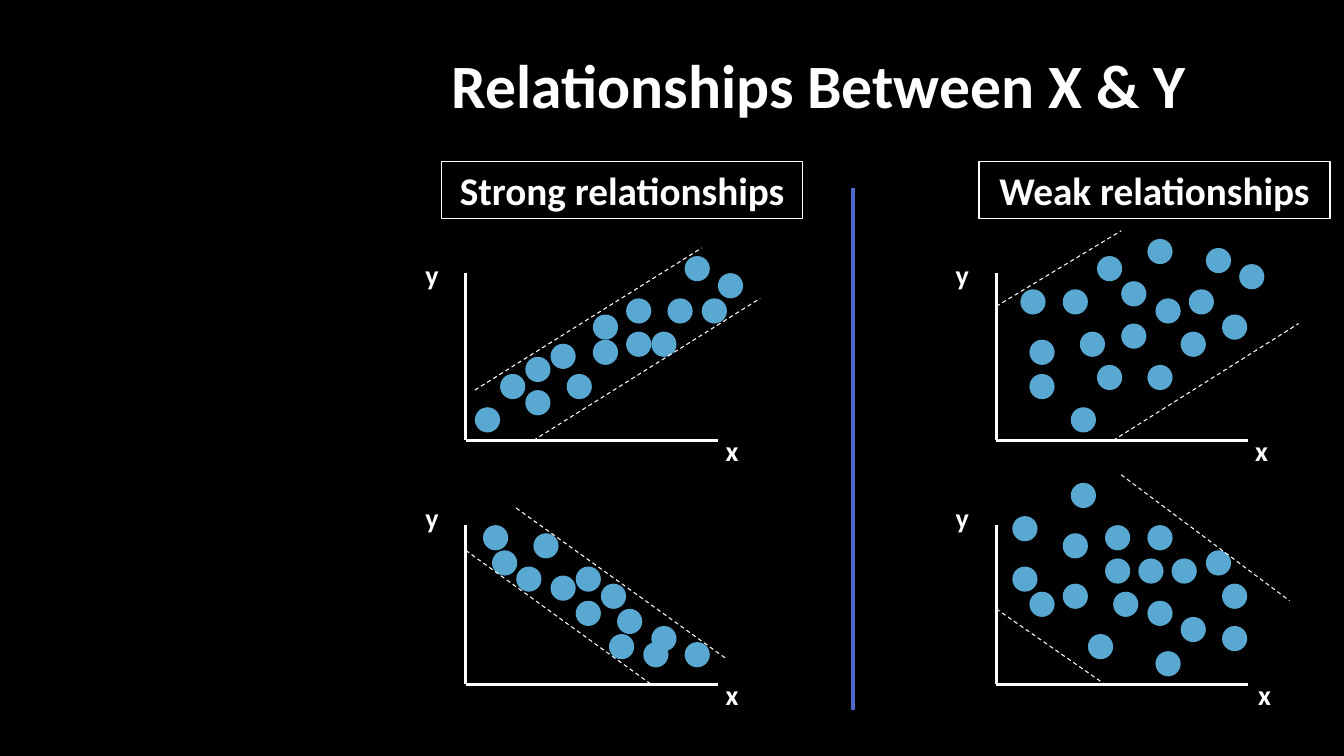
from dataclasses import dataclass

from lxml.etree import SubElement
from pptx import Presentation
from pptx.dml.color import RGBColor
from pptx.enum.dml import MSO_LINE
from pptx.enum.shapes import MSO_CONNECTOR, MSO_SHAPE
from pptx.enum.text import MSO_ANCHOR, MSO_AUTO_SIZE, PP_ALIGN
from pptx.oxml.ns import qn
from pptx.util import Inches, Pt


@dataclass(frozen=True)
class Theme:
    font: str = "Calibri"
    background: RGBColor = RGBColor.from_string("000000")
    ink: RGBColor = RGBColor.from_string("FFFFFF")
    point: RGBColor = RGBColor.from_string("59A8D1")
    divider: RGBColor = RGBColor.from_string("4E67C8")
    title_size: int = 44
    heading_size: int = 28
    label_size: int = 20


theme = Theme()
AXIS_WIDTH = 2.5
POINT_SIZE = 0.25
LABEL_HEIGHT = 0.44

# Axis heights run from top to base; points give their top left corners.
plots = [
    dict(left=4.62, top=2.71, base=4.37, y_label_top=2.51, x_label_left=7.1,
         points=[(4.71, 4.04), (4.96, 3.71), (6.79, 2.54), (6.96, 2.96),
                 (5.21, 3.87), (7.12, 2.71), (6.21, 3.29), (6.21, 2.96),
                 (6.62, 2.96), (5.88, 3.12), (5.21, 3.54), (5.46, 3.41),
                 (6.46, 3.29), (5.88, 3.37), (5.62, 3.71)],
         band=[(4.71, 3.87, 6.96, 2.46), (5.29, 4.37, 7.54, 2.96)]),
    dict(left=4.62, top=5.21, base=6.79, y_label_top=4.92, x_label_left=7.1,
         points=[(6.38, 6.37), (4.88, 5.46), (6.79, 6.37), (5.29, 5.29),
                 (6.12, 6.04), (6.46, 6.21), (5.71, 5.62), (4.79, 5.21),
                 (5.12, 5.62), (5.46, 5.71), (6.04, 6.29), (5.96, 5.79),
                 (5.71, 5.96)],
         band=[(5.12, 5.04, 7.21, 6.54), (4.62, 5.46, 6.46, 6.79)]),
    dict(left=9.88, top=2.71, base=4.37, y_label_top=2.51, x_label_left=12.35,
         points=[(11.12, 2.79), (10.21, 3.71), (11.38, 3.62), (11.79, 2.87),
                 (10.54, 2.87), (10.62, 4.04), (10.88, 3.62), (11.46, 2.96),
                 (10.88, 2.54), (10.21, 3.37), (10.12, 2.87), (10.71, 3.29),
                 (11.71, 3.29), (11.12, 3.21), (11.38, 2.37), (12.29, 2.62),
                 (12.12, 3.12), (11.96, 2.46)],
         band=[(9.88, 3.04, 11.12, 2.29), (11.04, 4.37, 12.88, 3.21)]),
    dict(left=9.88, top=5.21, base=6.79, y_label_top=4.92, x_label_left=12.38,
         points=[(10.04, 5.62), (10.04, 5.12), (10.54, 5.79), (11.46, 6.46),
                 (10.21, 5.87), (10.96, 5.21), (11.38, 5.96), (11.29, 5.54),
                 (10.96, 5.54), (10.54, 5.29), (11.62, 5.54), (11.04, 5.87),
                 (10.79, 6.29), (11.71, 6.12), (12.12, 5.79), (11.96, 5.46),
                 (12.12, 6.21), (11.38, 5.21), (10.62, 4.79)],
         band=[(11.12, 4.71, 12.79, 5.96), (9.88, 6.04, 10.96, 6.79)]),
]
headings = [("Strong relationships", 4.38, 3.58),
            ("Weak relationships", 9.71, 3.48)]


def write_text(frame, text, size, align=PP_ALIGN.LEFT, wrap=True,
               auto_size=MSO_AUTO_SIZE.SHAPE_TO_FIT_TEXT):
    frame.word_wrap = wrap
    frame.auto_size = auto_size
    paragraph = frame.paragraphs[0]
    paragraph.alignment = align
    run = paragraph.add_run()
    run.text = text
    run.font.name = theme.font
    run.font.size = Pt(size)
    run.font.bold = True
    run.font.color.rgb = theme.ink


def draw_line(ends, width, color=theme.ink, dash=None):
    """Draw a straight line; ends is (x1, y1, x2, y2) in inches."""
    line = slide.shapes.add_connector(
        MSO_CONNECTOR.STRAIGHT, *(Inches(end) for end in ends))
    line.line.color.rgb = color
    line.line.width = Pt(width)
    if dash:
        line.line.dash_style = dash
    SubElement(line._element.spPr, qn("a:effectLst"))


prs = Presentation()
prs.slide_width = Inches(13.33)
prs.slide_height = Inches(7.5)
slide = prs.slides.add_slide(prs.slide_layouts[5])
slide.background.fill.solid()
slide.background.fill.fore_color.rgb = theme.background

title = slide.shapes.title
title.left, title.top = Inches(0.92), Inches(0.15)
title.width, title.height = Inches(10.95), Inches(1.45)
write_text(title.text_frame, "Relationships Between X & Y", theme.title_size,
           align=PP_ALIGN.RIGHT, auto_size=MSO_AUTO_SIZE.NONE)
title.text_frame.vertical_anchor = MSO_ANCHOR.MIDDLE
title.text_frame.paragraphs[0].line_spacing = 0.9

for heading, left, width in headings:
    heading_box = slide.shapes.add_shape(
        MSO_SHAPE.RECTANGLE, Inches(left), Inches(1.6), Inches(width), Inches(0.57))
    heading_box.shadow.inherit = False
    heading_box.fill.solid()
    heading_box.fill.fore_color.rgb = theme.background
    heading_box.line.color.rgb = theme.ink
    heading_box.line.width = Pt(1)
    write_text(heading_box.text_frame, heading, theme.heading_size,
               align=PP_ALIGN.CENTER)
    heading_box.text_frame.vertical_anchor = MSO_ANCHOR.TOP

draw_line((8.46, 1.87, 8.46, 7.04), 2.25, color=theme.divider)

for plot in plots:
    left, base = plot["left"], plot["base"]
    draw_line((left, plot["top"], left, base), 2)
    draw_line((left, base, left + AXIS_WIDTH, base), 2)

    axis_labels = [("y", left - 0.5, plot["y_label_top"], 0.34),
                   ("x", plot["x_label_left"], base - 0.12, 0.33)]
    for name, label_left, label_top, label_width in axis_labels:
        axis_label = slide.shapes.add_textbox(
            Inches(label_left), Inches(label_top),
            Inches(label_width), Inches(LABEL_HEIGHT))
        write_text(axis_label.text_frame, name, theme.label_size, wrap=False)

    for x, y in plot["points"]:
        point = slide.shapes.add_shape(
            MSO_SHAPE.OVAL, Inches(x), Inches(y),
            Inches(POINT_SIZE), Inches(POINT_SIZE))
        point.shadow.inherit = False
        point.fill.solid()
        point.fill.fore_color.rgb = theme.point
        point.line.fill.background()

    for edge in plot["band"]:
        draw_line(edge, 0.75, dash=MSO_LINE.DASH)

prs.save("out.pptx")
